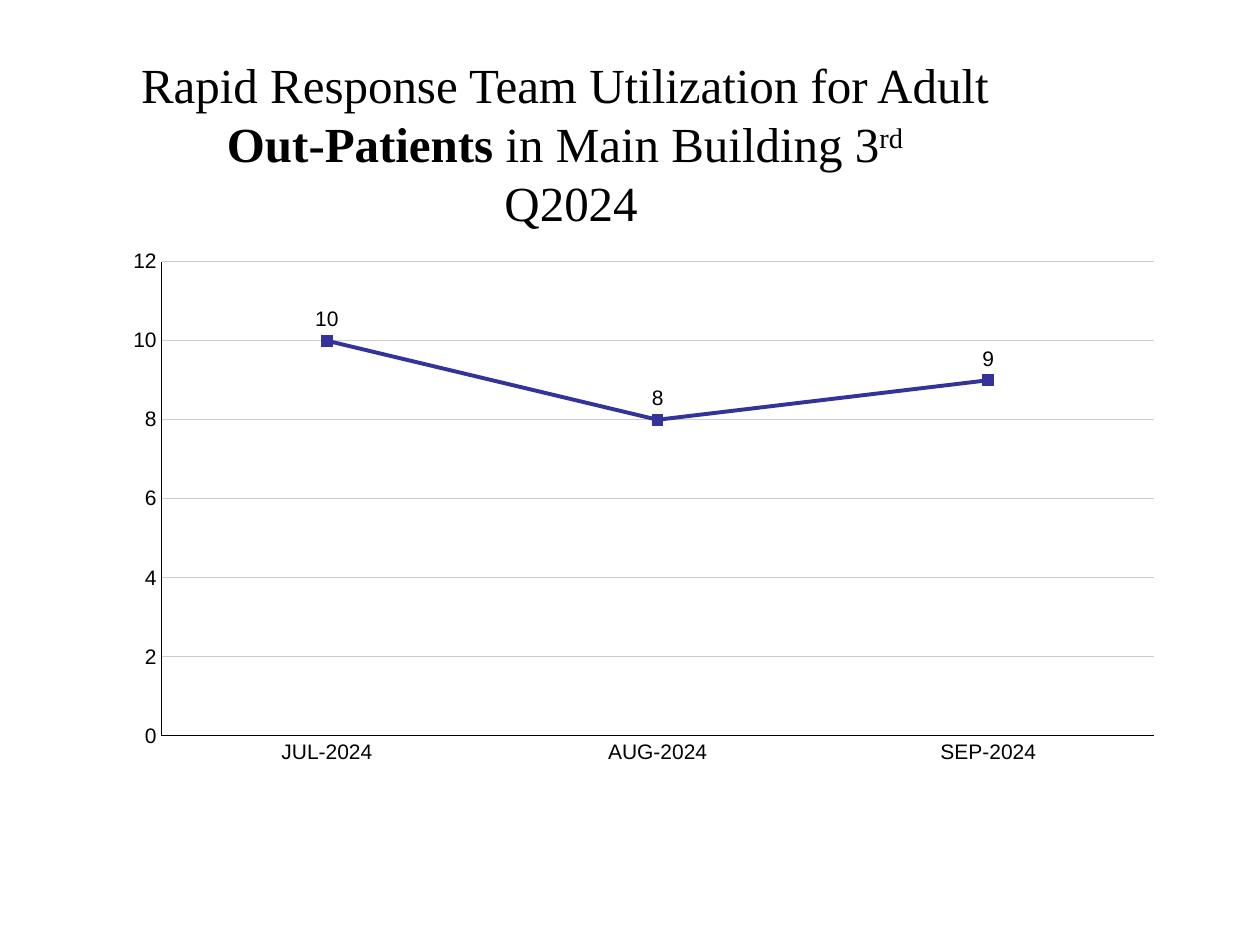
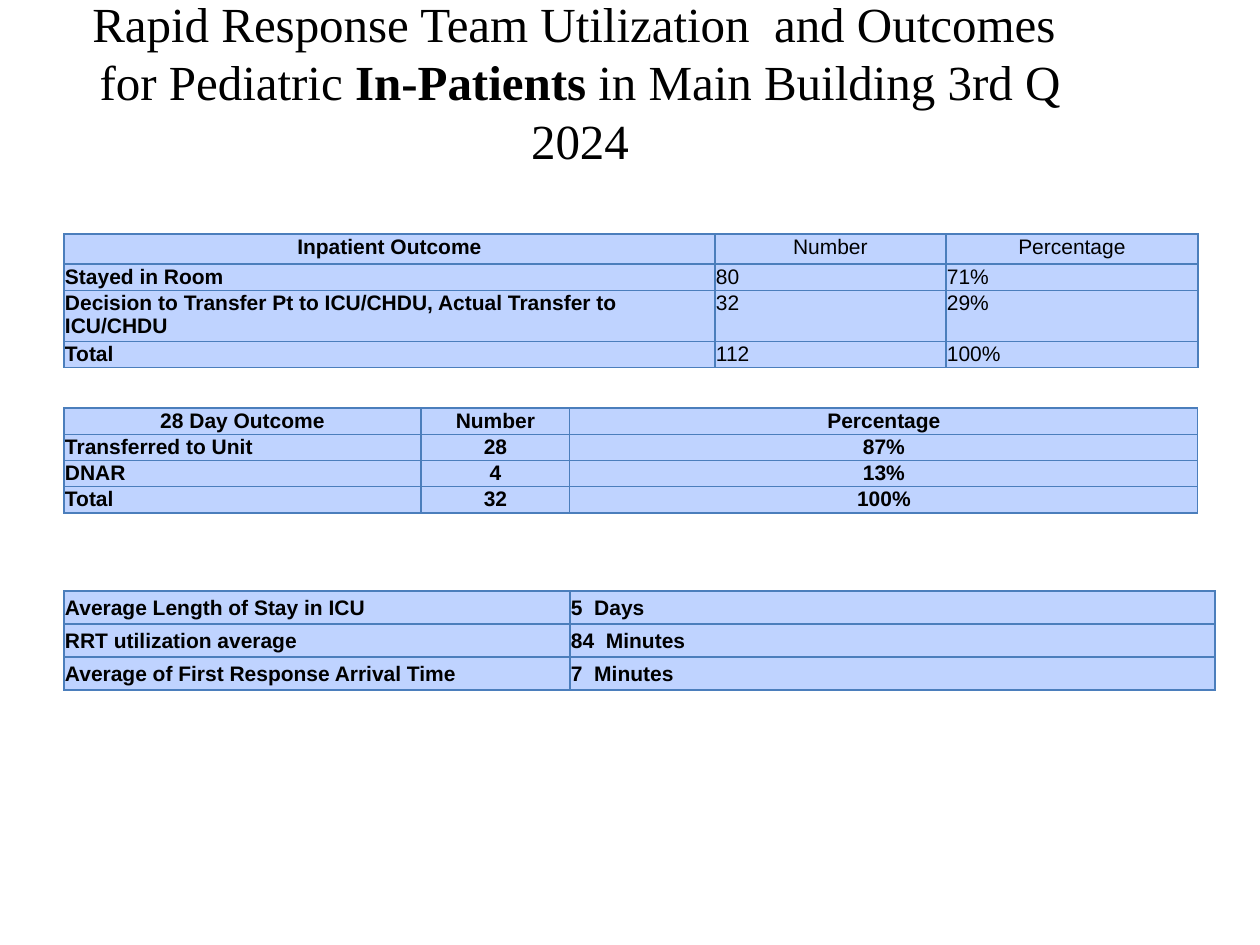
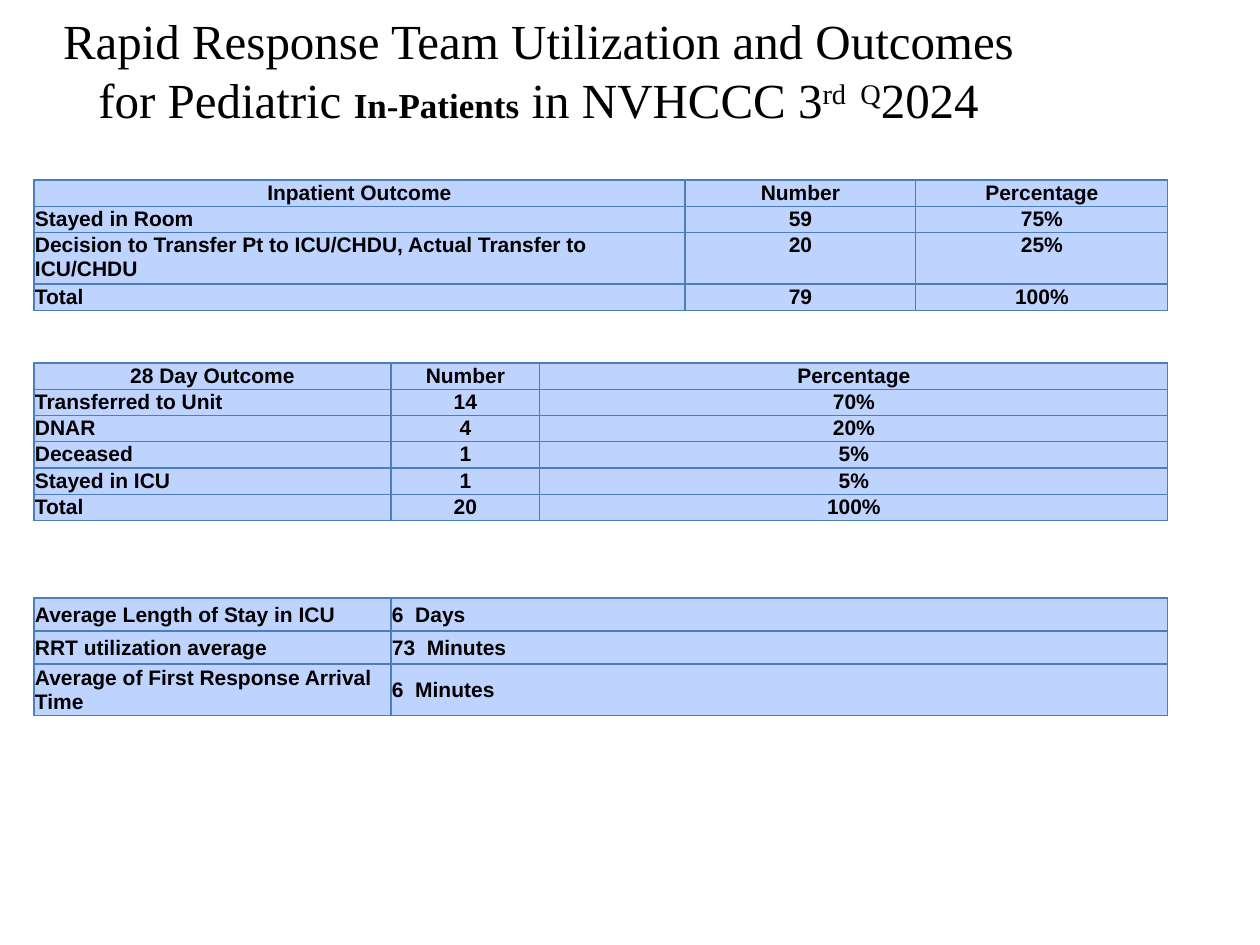
from lxml.etree import SubElement
from pptx import Presentation
from pptx.chart.data import CategoryChartData
from pptx.dml.color import RGBColor
from pptx.enum.chart import XL_CHART_TYPE, XL_LABEL_POSITION, XL_MARKER_STYLE, XL_TICK_MARK
from pptx.enum.text import MSO_ANCHOR, PP_ALIGN
from pptx.oxml import parse_xml
from pptx.oxml.ns import nsdecls, qn
from pptx.util import Emu, Pt

BLACK, CELL_BLUE, BORDER_BLUE = "000000", "BFD3FF", "4B7EBC"
GRID_GREY, SERIES_BLUE = "CCCCCC", "333399"
TITLE_FONT, BODY_FONT = "Times New Roman", "Arial"
LINE_HEIGHT = 26
OUTCOME_COLUMNS = [651, 231, 252]
DAY_COLUMNS = [357, 149, 628]
BOLD, RAISED = {"bold": True}, {"raised": True}


def px(count):
    return Emu(round(count * 914400 / 126))


def colour(hex_code):
    return RGBColor.from_string(hex_code)


def style_font(font, size=12, name=BODY_FONT, bold=False):
    font.size, font.name, font.bold = Pt(size), name, bold
    font.color.rgb = colour(BLACK)


def write(para, text, raised=False, **font_format):
    span = para.add_run()
    span.text = text
    style_font(span.font, **font_format)
    if raised:
        span._r.get_or_add_rPr().set("baseline", "30000")


def style_line(line, hex_code):
    """Draw a hairline in the given colour."""
    line.width = Pt(0)
    line.color.rgb = colour(hex_code)


def add_borders(cell):
    properties = cell._tc.get_or_add_tcPr()
    for side in ("lnL", "lnR", "lnT", "lnB"):
        border = SubElement(properties, qn(f"a:{side}"), w=str(Pt(0.75)))
        fill = SubElement(border, qn("a:solidFill"))
        SubElement(fill, qn("a:srgbClr"), val=BORDER_BLUE)


def place_plot(chart, left, top, width, height):
    """Fix the inner plot area, in fractions of the chart frame."""
    plot_area = chart._chartSpace.chart.plotArea
    for layout in plot_area.findall(qn("c:layout")):
        plot_area.remove(layout)
    plot_area.insert(0, parse_xml(
        f'<c:layout {nsdecls("c")}><c:manualLayout><c:layoutTarget val="inner"/>'
        '<c:xMode val="edge"/><c:yMode val="edge"/>'
        f'<c:x val="{left}"/><c:y val="{top}"/><c:w val="{width}"/><c:h val="{height}"/>'
        '</c:manualLayout></c:layout>'))


class Report:
    def __init__(self):
        self.deck = Presentation()
        self.deck.slide_width, self.deck.slide_height = px(1260), px(945)
        self.page = None

    def new_page(self):
        self.page = self.deck.slides.add_slide(self.deck.slide_layouts[6])

    def title(self, left, top, width, height, lines):
        box = self.page.shapes.add_textbox(px(left), px(top), px(width), px(height))
        frame = box.text_frame
        frame.word_wrap = True
        frame.margin_top = px(7)
        for index, line in enumerate(lines):
            para = frame.add_paragraph() if index else frame.paragraphs[0]
            para.alignment = PP_ALIGN.CENTER
            for text, changes in line:
                write(para, text, **{"size": 28, "name": TITLE_FONT, **changes})

    def table(self, left, top, columns, heights, rows, header=True,
              value_align=PP_ALIGN.CENTER, value_bold=True, anchor=MSO_ANCHOR.TOP):
        frame = self.page.shapes.add_table(len(rows), len(columns), px(left), px(top),
                                           px(sum(columns)), px(sum(heights)))
        table = frame.table
        table.first_row = table.horz_banding = False
        for column, width in zip(table.columns, columns):
            column.width = px(width)
        for row, height in zip(table.rows, heights):
            row.height = px(height)
        for row_index, texts in enumerate(rows):
            for column_index, text in enumerate(texts):
                cell = table.cell(row_index, column_index)
                add_borders(cell)
                cell.fill.solid()
                cell.fill.fore_color.rgb = colour(CELL_BLUE)
                cell.margin_left = cell.margin_right = cell.margin_top = px(1)
                cell.margin_bottom = 0
                cell.vertical_anchor = anchor
                para = cell.text_frame.paragraphs[0]
                if header and row_index == 0:
                    para.alignment = PP_ALIGN.CENTER
                else:
                    para.alignment = value_align if column_index else PP_ALIGN.LEFT
                write(para, text, bold=value_bold or column_index == 0)

    def averages(self, left, top, columns, heights, values):
        labels = ["Average Length of Stay in ICU", "RRT utilization average",
                  "Average of First Response Arrival Time"]
        self.table(left, top, columns, heights, list(zip(labels, values)), header=False,
                   value_align=PP_ALIGN.LEFT, anchor=MSO_ANCHOR.MIDDLE)

    def line_chart(self, left, top, width, height, months, counts):
        data = CategoryChartData(number_format="#0")
        data.categories = months
        data.add_series("Series 1", counts)
        chart = self.page.shapes.add_chart(XL_CHART_TYPE.LINE_MARKERS, px(left), px(top),
                                           px(width), px(height), data).chart
        chart.has_legend = chart.has_title = False
        style_font(chart.font, size=10, name="Calibri")
        place_plot(chart, 0.096, 0.038, 0.885, 0.789)
        for axis in (chart.category_axis, chart.value_axis):
            axis.major_tick_mark = axis.minor_tick_mark = XL_TICK_MARK.NONE
            style_font(axis.tick_labels.font)
            style_line(axis.format.line, BLACK)
        scale = chart.value_axis
        scale.minimum_scale, scale.maximum_scale, scale.major_unit = 0, 12, 2
        scale.has_major_gridlines = True
        style_line(scale.major_gridlines.format.line, GRID_GREY)

        plot = chart.plots[0]
        plot.vary_by_categories = False
        plot.has_data_labels = True
        plot.data_labels.show_value = True
        plot.data_labels.position = XL_LABEL_POSITION.ABOVE
        style_font(plot.data_labels.font)
        series = plot.series[0]
        series.smooth = False
        style_line(series.format.line, SERIES_BLUE)
        series.marker.style, series.marker.size = XL_MARKER_STYLE.SQUARE, 6
        series.marker.format.fill.solid()
        series.marker.format.fill.fore_color.rgb = colour(SERIES_BLUE)
        style_line(series.marker.format.line, SERIES_BLUE)


def outcome_rows(stayed, transferred, total):
    return [("Inpatient Outcome", "Number", "Percentage"),
            ("Stayed in Room", *stayed),
            ("Decision to Transfer Pt to ICU/CHDU, Actual Transfer to ICU/CHDU", *transferred),
            ("Total", total, "100%")]


def day_rows(*outcomes):
    return [("28 Day Outcome", "Number", "Percentage"), *outcomes]


def outpatient_page(report):
    report.new_page()
    report.title(123, 48, 884, 190, [
        [("Rapid Response Team Utilization for Adult ", {})],
        [("Out-Patients", BOLD), (" in Main Building 3", {}), ("rd", RAISED)],
        [(" Q2024", {})]])
    report.line_chart(54, 239, 1121, 601, ["JUL-2024", "AUG-2024", "SEP-2024"], [10, 8, 9])


def main_building_page(report):
    report.new_page()
    report.title(74, -14, 1012, 310, [[
        ("Rapid Response Team Utilization  and Outcomes  for Pediatric ", {}),
        ("In-Patients ", BOLD), ("in Main Building 3rd Q 2024", {})]])
    left = 64
    report.table(left, 234, OUTCOME_COLUMNS, [30, LINE_HEIGHT, 51, LINE_HEIGHT],
                 outcome_rows(("80", "71%"), ("32", "29%"), "112"),
                 value_align=PP_ALIGN.LEFT, value_bold=False)
    report.table(left, 408, DAY_COLUMNS, [LINE_HEIGHT] * 4, day_rows(
        ("Transferred to Unit", "28", "87%"), ("DNAR", "4", "13%"), ("Total", "32", "100%")))
    report.averages(left, 591, [506, 645], [33] * 3, ["5  Days", "84  Minutes", "7  Minutes"])


def children_centre_page(report):
    report.new_page()
    report.title(20, 4, 1037, 190, [[
        ("Rapid Response Team Utilization and Outcomes for Pediatric ", {}),
        ("In-Patients", {"size": 20, "bold": True}), (" ", BOLD),
        ("in NVHCCC 3", {}), ("rd  Q", RAISED), ("2024", {})]])
    left = 34
    report.table(left, 180, OUTCOME_COLUMNS, [LINE_HEIGHT, LINE_HEIGHT, 51, LINE_HEIGHT],
                 outcome_rows(("59", "75%"), ("20", "25%"), "79"))
    report.table(left, 363, DAY_COLUMNS, [LINE_HEIGHT] * 6, day_rows(
        ("Transferred to Unit", "14", "70%"), ("DNAR", "4", "20%"), ("Deceased", "1", "5%"),
        ("Stayed in ICU", "1", "5%"), ("Total", "20", "100%")))
    report.averages(left, 598, [357, 777], [33, 33, 51],
                    ["6  Days", "73  Minutes", "6  Minutes"])


def main():
    report = Report()
    outpatient_page(report)
    main_building_page(report)
    children_centre_page(report)
    report.deck.save("out.pptx")


if __name__ == "__main__":
    main()
